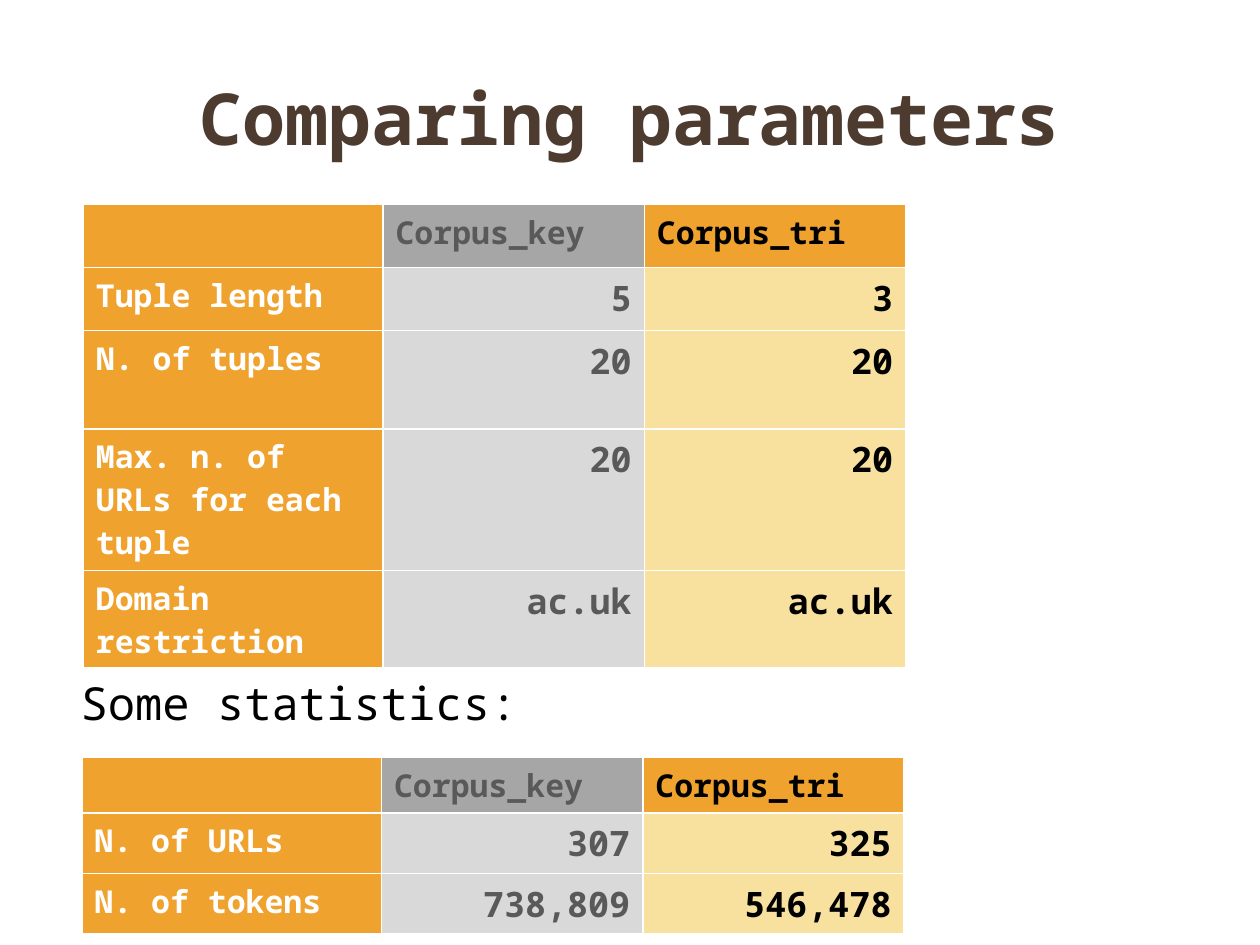
from lxml.etree import SubElement
from pptx import Presentation
from pptx.dml.color import RGBColor
from pptx.enum.text import MSO_ANCHOR as Anchor, MSO_AUTO_SIZE as AutoSize, PP_ALIGN as Align
from pptx.oxml.ns import qn
from pptx.util import Cm, Pt

FONT = "Noto Sans Mono"
BROWN = RGBColor(0x4E, 0x3B, 0x30)
ORANGE = RGBColor(0xF0, 0xA2, 0x2E)
CREAM = RGBColor(0xF8, 0xE1, 0x9F)
MID_GREY = RGBColor(0xA6, 0xA6, 0xA6)
PALE_GREY = RGBColor(0xD9, 0xD9, 0xD9)
DARK_GREY = RGBColor(0x59, 0x59, 0x59)
BLACK = RGBColor(0, 0, 0)
WHITE = RGBColor(0xFF, 0xFF, 0xFF)

# One entry per column: label, Corpus_key, Corpus_tri
HEADER_FILLS = (ORANGE, MID_GREY, ORANGE)
BODY_FILLS = (ORANGE, PALE_GREY, CREAM)
TEXT_COLOURS = (WHITE, DARK_GREY, BLACK)
COLUMN_WIDTHS = (6.04, 5.27, 5.27)

HEADER = ("", "Corpus_key", "Corpus_tri")
PARAMETERS = (
    HEADER,
    ("Tuple length", "5", "3"),
    ("N. of tuples", "20", "20"),
    ("Max. n. of URLs for each tuple", "20", "20"),
    ("Domain restriction", "ac.uk", "ac.uk"),
)
STATISTICS = (
    HEADER,
    ("N. of URLs", "307", "325"),
    ("N. of tokens", "738,809", "546,478"),
)


def place(shape, left, top, width, height):
    shape.left, shape.top = Cm(left), Cm(top)
    shape.width, shape.height = Cm(width), Cm(height)


def add_text(para, text, size, colour, bold=False, align=Align.LEFT):
    para.alignment = align
    span = para.add_run()
    span.text = text
    span.font.name = FONT
    span.font.size = Pt(size)
    span.font.bold = bold
    span.font.color.rgb = colour


def add_borders(cell, bottom_width):
    """Draw white cell edges; they must come before the fill in the XML."""
    properties = cell._tc.get_or_add_tcPr()
    for edge in ("lnL", "lnR", "lnT", "lnB"):
        width = bottom_width if edge == "lnB" else 1
        line = SubElement(properties, qn(f"a:{edge}"), w=str(Pt(width)))
        fill = SubElement(line, qn("a:solidFill"))
        SubElement(fill, qn("a:srgbClr"), val=str(WHITE))


def set_title(title, text):
    place(title, 1.27, 0.76, 22.86, 3.18)
    title.text_frame.vertical_anchor = Anchor.MIDDLE
    title.text_frame.auto_size = AutoSize.NONE
    add_text(title.text_frame.paragraphs[0], text, 41, BROWN, True, Align.CENTER)


def set_body(body, text):
    """Write the caption between the tables, lowered by the top inset."""
    place(body, 1.37, 3.3, 22.86, 15.75)
    frame = body.text_frame
    frame.auto_size = AutoSize.NONE
    frame.margin_top = Cm(10.3)
    para = frame.paragraphs[0]
    para.space_before = Pt(0)
    properties = para._p.get_or_add_pPr()
    properties.set("marL", "0")
    properties.set("indent", "0")
    SubElement(properties, qn("a:buNone"))
    add_text(para, text, 26, BLACK)


def add_corpus_table(slide, left, top, rows, heights, last_border=1):
    frame = slide.shapes.add_table(
        len(rows), len(HEADER), Cm(left), Cm(top), Cm(sum(COLUMN_WIDTHS)), Cm(sum(heights)))
    table = frame.table
    for column, width in zip(table.columns, COLUMN_WIDTHS):
        column.width = Cm(width)
    for r, (values, height) in enumerate(zip(rows, heights)):
        table.rows[r].height = Cm(height)
        fills = BODY_FILLS if r else HEADER_FILLS
        for c, text in enumerate(values):
            cell = table.cell(r, c)
            add_borders(cell, last_border if r == len(rows) - 1 else 1)
            cell.fill.solid()
            cell.fill.fore_color.rgb = fills[c]
            is_value = r > 0 and c > 0
            if text:
                add_text(cell.text_frame.paragraphs[0], text, 20 if is_value else 18,
                         TEXT_COLOURS[c], True, Align.RIGHT if is_value else Align.LEFT)


def main():
    deck = Presentation()
    deck.slide_width, deck.slide_height = Cm(25.4), Cm(19.05)
    slide = deck.slides.add_slide(deck.slide_layouts[1])

    # Title and caption
    set_title(slide.shapes.title, "Comparing parameters")
    set_body(slide.placeholders[1], "Some statistics:")

    # Search parameters above, resulting corpus sizes below
    add_corpus_table(slide, 1.68, 4.12, PARAMETERS, (1.27, 1.27, 1.99, 2.85, 1.93), 3)
    add_corpus_table(slide, 1.65, 15.27, STATISTICS, (1.1, 1.22, 1.22))

    deck.save("out.pptx")


if __name__ == "__main__":
    main()
